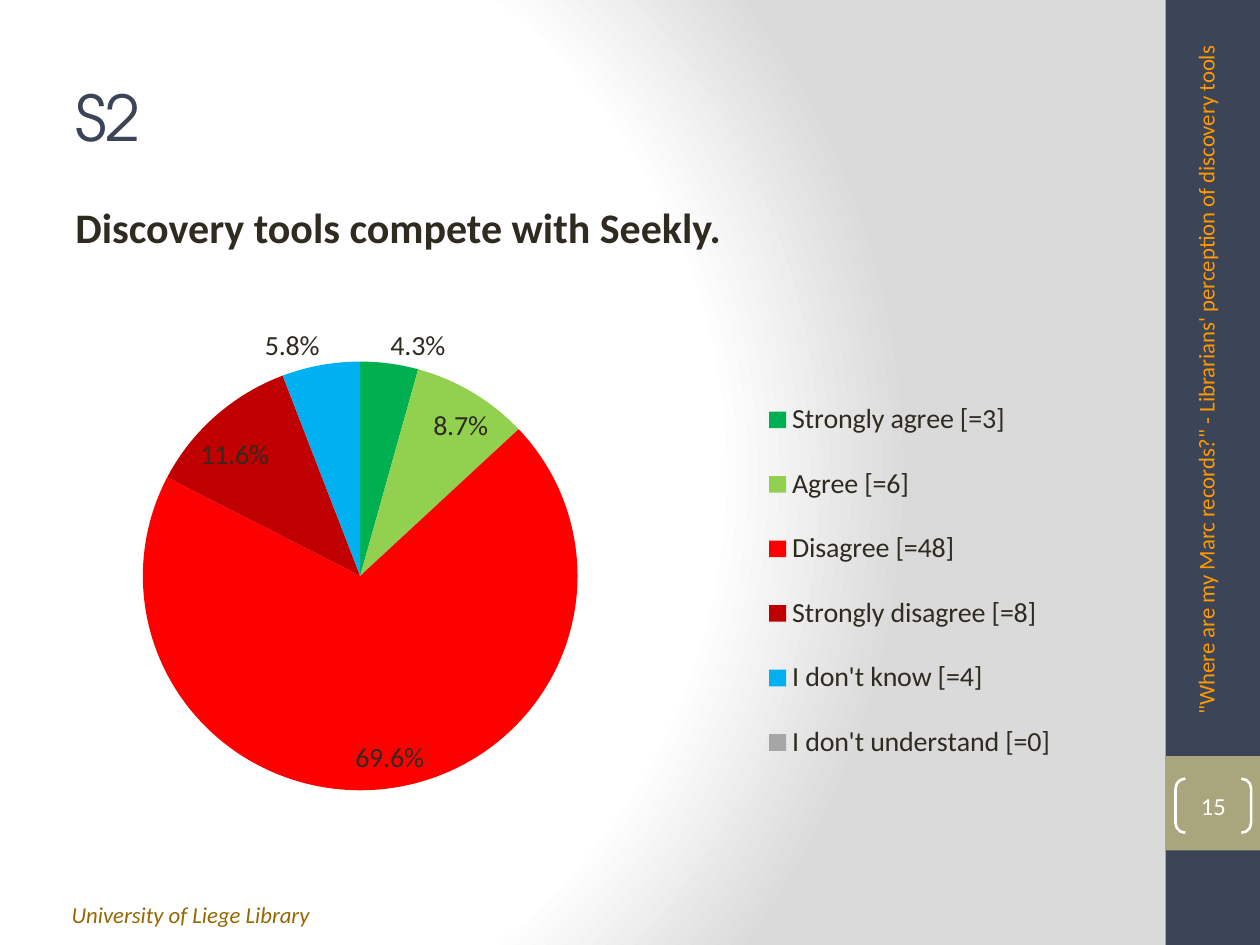
from lxml import etree
from pptx import Presentation
from pptx import util as u
from pptx.chart.data import CategoryChartData
from pptx.dml.color import RGBColor
from pptx.enum import chart as ch, shapes, text
from pptx.oxml import parse_xml
from pptx.oxml.ns import nsdecls, qn

Pt = u.Pt


class Theme:
    font, title_font = "Calibri", "TeX Gyre Adventor"
    navy, olive, ink = "3C4457", "A9A57C", "2F2B20"
    brown, orange, white, grey = "956803", "FF9900", "FFFFFF", "DADADA"
    title, question, label, number, small = 36, 24, 16, 14, 13


def style(font, size, color, name=Theme.font):
    font.name, font.size = name, Pt(size)
    font.color.rgb = RGBColor.from_string(color)


def add_layout(parent, index, x, y, w, h, inner=False):
    """Give a chart part a manual layout, in fractions of the chart."""
    target = '<c:layoutTarget val="inner"/>' if inner else ""
    parent.insert(index, parse_xml(
        f'<c:layout {nsdecls("c")}><c:manualLayout>{target}'
        '<c:xMode val="edge"/><c:yMode val="edge"/>'
        f'<c:x val="{x}"/><c:y val="{y}"/><c:w val="{w}"/><c:h val="{h}"/>'
        '</c:manualLayout></c:layout>'))


prs = Presentation()
prs.slide_width, prs.slide_height = Pt(720), Pt(540)
s = prs.slides.add_slide(prs.slide_layouts[5])

# Background: white glow fading to grey on the right
fill = s.background.fill
fill.solid()
bg_pr = s.background._cSld.bg.bgPr
bg_pr.replace(bg_pr[0], parse_xml(
    f'<a:gradFill {nsdecls("a")} rotWithShape="1"><a:gsLst>'
    + "".join(f'<a:gs pos="{pos}"><a:srgbClr val="{c}"/></a:gs>' for pos, c in
              [(0, Theme.white), (75000, Theme.white), (100000, Theme.grey)])
    + '</a:gsLst><a:path path="circle">'
      '<a:fillToRect l="20000" t="50000" r="100000" b="50000"/>'
      '</a:path></a:gradFill>'))

# Side band and the block behind the slide number
for top, height, color in [(0, 540, Theme.navy), (432, 54, Theme.olive)]:
    sp = s.shapes.add_shape(shapes.MSO_SHAPE.RECTANGLE,
                            Pt(666), Pt(top), Pt(54), Pt(height))
    sp.shadow.inherit = False
    sp.fill.solid()
    sp.fill.fore_color.rgb = RGBColor.from_string(color)
    sp.line.fill.background()

# Title
title = s.shapes.title
title.left, title.top, title.width, title.height = Pt(36), Pt(21.6), Pt(600), Pt(90)
tf = title.text_frame
tf.text = "S2"
tf.vertical_anchor = text.MSO_ANCHOR.MIDDLE
p = tf.paragraphs[0]
p.alignment = text.PP_ALIGN.LEFT
style(p.font, Theme.title, Theme.navy, Theme.title_font)
p.runs[0].font._element.set("spc", "-100")

# Question, footer and vertical talk title
for words, box, size, color, bold, italic, rotation in [
    ("Discovery tools compete with Seekly.", (36, 111.6, 600, 392.4),
     Theme.question, Theme.ink, True, False, 0),
    ("University of Liege Library", (33.84, 511.2, 383, 23),
     Theme.small, Theme.brown, False, True, 0),
    ("\"Where are my Marc records?\" - Librarians' perception of discovery tools",
     (491.76, 200.88, 400.32, 28.8), Theme.small, Theme.orange, False, False, 270),
]:
    sp = s.shapes.add_textbox(*map(Pt, box))
    sp.rotation = rotation
    tf = sp.text_frame
    tf.word_wrap = True
    p = tf.paragraphs[0]
    p.text = words
    style(p.font, size, color)
    p.font.bold, p.font.italic = bold, italic

# Slide number in brackets
sp = s.shapes.add_shape(shapes.MSO_SHAPE.DOUBLE_BRACKET,
                        Pt(671.76), Pt(444.96), Pt(43.2), Pt(30.96))
sp.adjustments[0] = 0.18
sp.shadow.inherit = False
sp.fill.background()
sp.line.color.rgb = RGBColor.from_string(Theme.white)
sp.line.width = Pt(1.5)
tf = sp.text_frame
tf.margin_left = tf.margin_top = tf.margin_right = tf.margin_bottom = 0
tf.vertical_anchor = text.MSO_ANCHOR.MIDDLE
p = tf.paragraphs[0]
p.text = "15"
p.alignment = text.PP_ALIGN.CENTER
style(p.font, Theme.number, Theme.white)

# Pie chart of the answers
answers = [
    ("Strongly agree [=3]", 0.043, "00B050"),
    ("Agree [=6]", 0.087, "92D050"),
    ("Disagree [=48]", 0.696, "FF0000"),
    ("Strongly disagree [=8]", 0.116, "C00000"),
    ("I don't know [=4]", 0.058, "00B0F0"),
    ("I don't understand [=0]", 0, "A6A6A6"),
]
data = CategoryChartData(number_format="0.0%")
data.categories = [name for name, _, _ in answers]
data.add_series("Series 1", [value for _, value, _ in answers])
chart = s.shapes.add_chart(ch.XL_CHART_TYPE.PIE, Pt(28.08), Pt(184.32),
                           Pt(592.56), Pt(306.72), data).chart
style(chart.font, Theme.label, Theme.ink)
chart.has_title = False
chart.has_legend = True
legend = chart.legend
legend.position = ch.XL_LEGEND_POSITION.RIGHT
legend.include_in_layout = False
style(legend.font, Theme.label, Theme.ink)
for old in legend._element.findall(qn("c:layout")):
    legend._element.remove(old)
add_layout(legend._element, 1, 0.69, 0.08, 0.28, 0.79)
plot_area = chart._chartSpace.chart.plotArea
for old in plot_area.findall(qn("c:layout")):
    plot_area.remove(old)
add_layout(plot_area, 0, 0.09, 0.06, 0.42, 0.81, inner=True)

plot = chart.plots[0]
plot.vary_by_categories = True
series = plot.series[0]
for i, (_, _, color) in enumerate(answers):
    point = series.points[i].format
    point.fill.solid()
    point.fill.fore_color.rgb = RGBColor.from_string(color)
labels = series.data_labels
labels.show_value = True
labels.number_format, labels.number_format_is_linked = "0.0%", False
labels.position = ch.XL_LABEL_POSITION.BEST_FIT
style(labels.font, Theme.label, Theme.ink)
# The empty slice carries no label
empty = etree.Element(qn("c:dLbl"))
etree.SubElement(empty, qn("c:idx")).set("val", str(len(answers) - 1))
etree.SubElement(empty, qn("c:delete")).set("val", "1")
labels._element.insert(0, empty)

# Return button, filled with the slide background
sp = s.shapes.add_shape(shapes.MSO_SHAPE.ACTION_BUTTON_RETURN,
                        Pt(632.16), Pt(2.88), Pt(33.84), Pt(20.16))
sp.shadow.inherit = False
sp.line.fill.background()
sp._element.set("useBgFill", "1")
sp._element.spPr.find(qn("a:xfrm")).set("flipH", "1")

prs.save("out.pptx")
